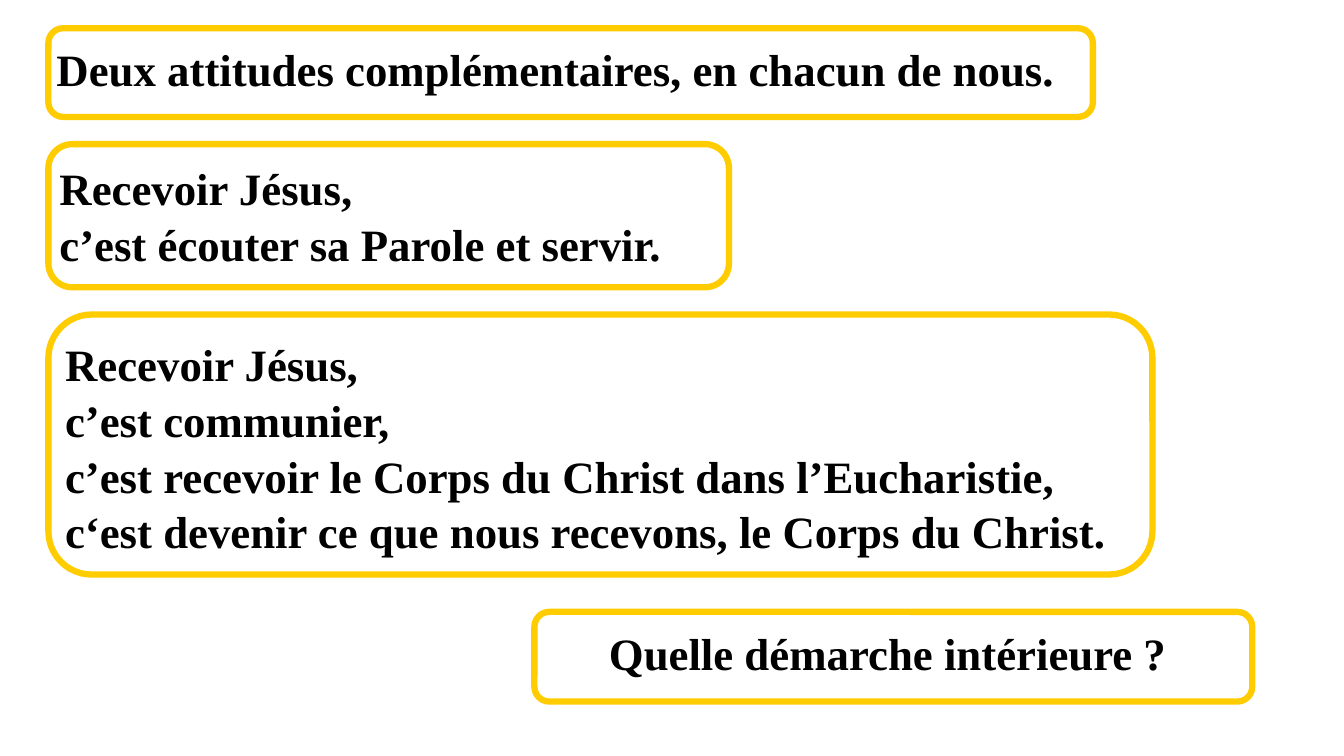
from dataclasses import dataclass

from pptx import Presentation
from pptx.dml.color import RGBColor
from pptx.enum.shapes import MSO_SHAPE
from pptx.enum.text import MSO_ANCHOR, MSO_AUTO_SIZE, PP_ALIGN
from pptx.util import Inches, Pt

ROUNDED = MSO_SHAPE.ROUNDED_RECTANGLE
TOP = MSO_ANCHOR.TOP
NO_AUTOFIT = MSO_AUTO_SIZE.NONE
LEFT, CENTER = PP_ALIGN.LEFT, PP_ALIGN.CENTER
TITLE_ONLY_LAYOUT = 5


@dataclass(frozen=True)
class Theme:
    font: str = "Times New Roman"
    size: float = 32
    line_spacing: float = 1.04
    text: RGBColor = RGBColor(0, 0, 0)
    frame: RGBColor = RGBColor(0xFF, 0xCC, 0x00)
    frame_width: float = 4.5
    background: RGBColor = RGBColor(0xFF, 0xFF, 0xFF)
    inset: float = 0.04
    top_inset: float = 0.07


THEME = Theme()
MARGIN = 0.48
CORNER_INSET = 0.04  # room taken by the title frame's rounded corners


def write_lines(shape, lines, align=LEFT, extra=0, extra_right=0):
    """Fill a shape with one bold paragraph per line."""
    frame = shape.text_frame
    frame.word_wrap = True
    frame.auto_size = NO_AUTOFIT
    frame.vertical_anchor = TOP
    frame.margin_left = frame.margin_bottom = Inches(THEME.inset + extra)
    frame.margin_right = Inches(THEME.inset + extra + extra_right)
    frame.margin_top = Inches(THEME.top_inset + extra)
    for index, line in enumerate(lines):
        paragraph = frame.paragraphs[0] if index == 0 else frame.add_paragraph()
        paragraph.alignment = align
        paragraph.line_spacing = THEME.line_spacing
        paragraph.space_before = paragraph.space_after = Pt(0)
        run = paragraph.add_run()
        run.text = line
        run.font.name = THEME.font
        run.font.size = Pt(THEME.size)
        run.font.bold = True
        run.font.color.rgb = THEME.text


def add_frame(slide, box):
    """Draw a golden rounded outline."""
    shape = slide.shapes.add_shape(ROUNDED, *map(Inches, box))
    shape.shadow.inherit = False
    shape.fill.background()
    shape.line.color.rgb = THEME.frame
    shape.line.width = Pt(THEME.frame_width)
    return shape


def add_title(slide, box, text):
    """Place the title placeholder inside its frame."""
    add_frame(slide, box)
    title = slide.shapes.title
    title.left, title.top, title.width, title.height = map(Inches, box)
    write_lines(title, [text], extra=CORNER_INSET)


def add_statement(slide, box, lines):
    write_lines(add_frame(slide, box), lines)


def add_question(slide, box, text):
    """Place the closing question, slightly left of centre."""
    write_lines(add_frame(slide, box), [text], CENTER, extra_right=0.11)


def main():
    presentation = Presentation()
    presentation.slide_width = Inches(13.33)
    presentation.slide_height = Inches(7.5)
    slide = presentation.slides.add_slide(
        presentation.slide_layouts[TITLE_ONLY_LAYOUT])
    slide.background.fill.solid()
    slide.background.fill.fore_color.rgb = THEME.background

    # Title
    add_title(slide, (MARGIN, 0.28, 10.36, 0.88),
              "Deux attitudes complémentaires, en chacun de nous.")

    # The two attitudes
    add_statement(slide, (MARGIN, 1.43, 6.75, 1.42), [
        "Recevoir Jésus,",
        "c’est écouter sa Parole et servir.",
    ])
    add_statement(slide, (MARGIN, 3.12, 10.95, 2.58), [
        "Recevoir Jésus,",
        "c’est communier,",
        "c’est recevoir le Corps du Christ dans l’Eucharistie,",
        "c‘est devenir ce que nous recevons, le Corps du Christ.",
    ])

    # Closing question
    add_question(slide, (5.3, 6.07, 7.12, 0.89), "Quelle démarche intérieure ?")

    presentation.save("out.pptx")


if __name__ == "__main__":
    main()
